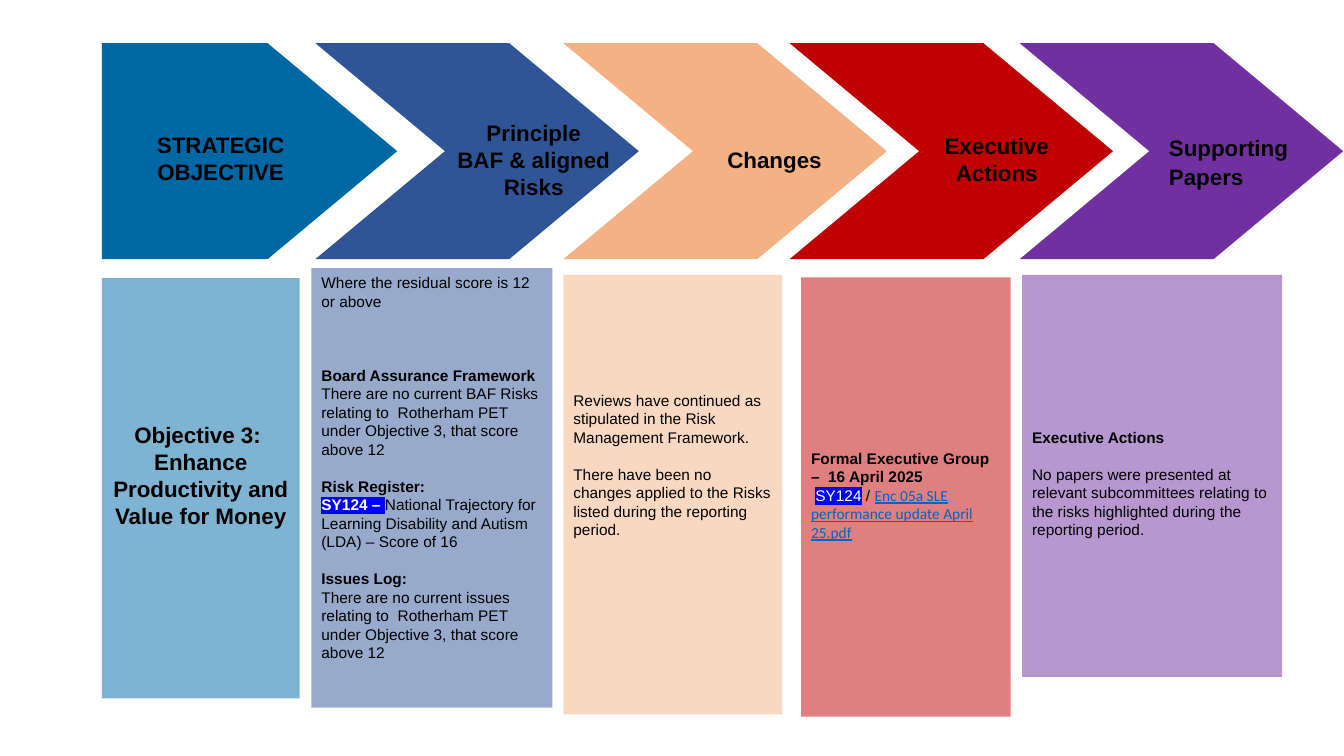
from pptx import Presentation
from pptx.dml.color import RGBColor
from pptx.enum.shapes import MSO_SHAPE
from pptx.enum.text import MSO_ANCHOR, PP_ALIGN
from pptx.oxml import parse_xml
from pptx.oxml.ns import nsdecls
from pptx.util import Cm, Pt

COLORS = {
    "black": "000000", "white": "FFFFFF", "mark": "0000FF", "link": "0563C1",
    "blue": "0067A5", "navy": "2F5597", "peach": "F4B183", "red": "C00000", "purple": "7030A0",
    "pale blue": "7FB3D2", "pale navy": "97AACB", "pale peach": "F9D8C1",
    "pale red": "DF7F7F", "pale purple": "B797CF",
}
GAP = 13.2
LINE = 0.466
BOLD = {"bold": True}
TAG = {"color": "white", "mark": "mark"}
LINK = {"color": "link", "font": "Calibri", "under": True}


def write(para, words, size=11, color="black", bold=False, font="Arial", under=None, mark=None):
    run = para.add_run()
    run.text = words
    face = run.font
    face.size = Pt(size)
    face.bold = bold
    face.underline = under
    face.color.rgb = RGBColor.from_string(COLORS[color])
    if mark:
        glow = parse_xml(f'<a:highlight {nsdecls("a")}><a:srgbClr val="{COLORS[mark]}"/></a:highlight>')
        run._r.get_or_add_rPr().append(glow)
    face.name = font


class Board:
    def __init__(self):
        self.deck = Presentation()
        self.deck.slide_width = Cm(33.87)
        self.deck.slide_height = Cm(19.05)
        self.slide = self.deck.slides.add_slide(self.deck.slide_layouts[6])

    def block(self, kind, color, left, top, width, height):
        shape = self.slide.shapes.add_shape(kind, Cm(left), Cm(top), Cm(width), Cm(height))
        shape.shadow.inherit = False
        shape.fill.solid()
        shape.fill.fore_color.rgb = RGBColor.from_string(COLORS[color])
        shape.line.fill.background()
        return shape

    def arrow(self, kind, color, left, width):
        shape = self.block(kind, color, left, 1.09, width, 5.44)
        shape.adjustments[0] = 0.6

    def fill(self, frame, paras, align, **style):
        frame.word_wrap = True
        frame.vertical_anchor = MSO_ANCHOR.TOP
        for i, (skip, runs) in enumerate(paras):
            para = frame.paragraphs[0] if i == 0 else frame.add_paragraph()
            para.alignment = align
            if skip:
                para.space_before = Pt(skip * GAP)
            for words, extra in runs:
                write(para, words, **{**style, **extra})

    def head(self, lines, left, top, width=5, align=PP_ALIGN.CENTER, space=1.0):
        frame = self.slide.shapes.add_textbox(Cm(left), Cm(top), Cm(width), Cm(0.7 * len(lines))).text_frame
        frame.margin_left = frame.margin_right = frame.margin_top = frame.margin_bottom = 0
        self.fill(frame, [(0, [(line, {})]) for line in lines], align, size=16, bold=True)
        for para in frame.paragraphs:
            para.line_spacing = space

    def panel(self, color, place, rows, paras, align=PP_ALIGN.LEFT, **style):
        frame = self.block(MSO_SHAPE.RECTANGLE, color, *place).text_frame
        frame.margin_top = Cm(0.13 + rows * LINE)
        self.fill(frame, paras, align, **style)


def main():
    board = Board()
    board.arrow(MSO_SHAPE.PENTAGON, "blue", 2.57, 7.44)
    for color, left in (("navy", 7.95), ("peach", 14.2), ("red", 19.9), ("purple", 25.7)):
        board.arrow(MSO_SHAPE.CHEVRON, color, left, 8.15)

    board.head(["STRATEGIC", "OBJECTIVE"], 3.06, 3.3)
    board.head(["Principle", "BAF & aligned", "Risks"], 10.95, 3)
    board.head(["Changes"], 17.02, 3.68)
    board.head(["Executive", "Actions"], 22.62, 3.33)
    board.head(["Supporting", "Papers"], 29.46, 3.33, 3.3, PP_ALIGN.LEFT, 1.07)

    board.panel("pale blue", (2.57, 7.01, 4.98, 10.59), 7.45, [
        (0, [("Objective 3:  Enhance Productivity and Value for Money", {})]),
    ], PP_ALIGN.CENTER, size=16, bold=True)
    board.panel("pale navy", (7.85, 6.76, 6.07, 11.07), 0, [
        (0, [("Where the residual score is 12 or above", {})]),
        (3, [("Board Assurance Framework", BOLD)]),
        (0, [("There are no current BAF Risks relating to  Rotherham PET under Objective 3, that score above 12", {})]),
        (1, [("Risk Register:", BOLD)]),
        (0, [("SY124 – ", {**TAG, **BOLD}),
             ("National Trajectory for Learning Disability and Autism (LDA) – Score of 16", {})]),
        (1, [("Issues Log:", BOLD)]),
        (0, [("There are no current issues relating to  Rotherham PET under Objective 3, that score above 12", {})]),
    ])
    board.panel("pale peach", (14.2, 6.93, 5.51, 11.07), 6, [
        (0, [("Reviews have continued as stipulated in the Risk Management Framework.", {})]),
        (1, [("There have been no changes applied to the Risks listed during the reporting period.", {})]),
    ])
    board.panel("pale red", (20.19, 6.99, 5.28, 11.07), 9, [
        (0, [("Formal Executive Group –  16 April 2025", BOLD)]),
        (0, [(" ", {}), ("SY124", TAG), (" / ", {}),
             ("Enc 05a SLE performance update April 25.pdf", LINK)]),
    ])
    board.panel("pale purple", (25.76, 6.93, 6.55, 10.13), 8, [
        (0, [("Executive Actions", BOLD)]),
        (1, [("No papers were presented at relevant subcommittees relating to the risks "
              "highlighted during the reporting period.", {})]),
    ])
    board.deck.save("out.pptx")


if __name__ == "__main__":
    main()
